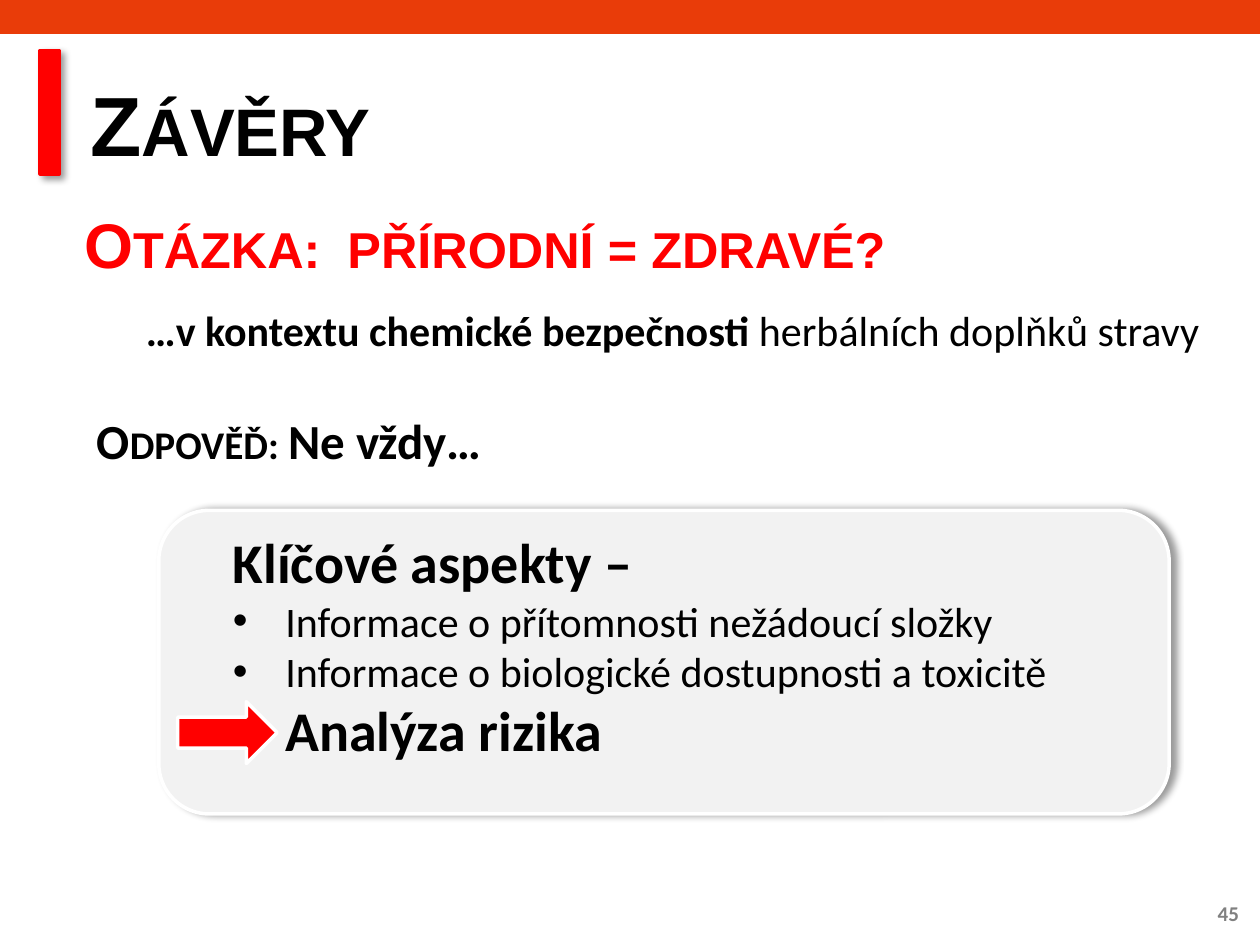
"""Build the conclusions slide with a question, its answer and the key aspects."""
from lxml import etree
from pptx import Presentation
from pptx.dml.color import RGBColor
from pptx.enum import shapes, text
from pptx.oxml.ns import qn
from pptx.util import Pt

THEME = {
    "heading": "Arial", "body": "Calibri",
    "black": "000000", "red": "FF0000", "orange": "E93C09",
    "panel": "F2F2F2", "white": "FFFFFF", "grey": "808080",
    "title": 48, "question": 36, "key": 32, "answer": 28, "text": 24, "number": 12,
}
INDENT = 30

BAR = (0, 0, 720, 19.4)
PANEL = (90.7, 291.6, 577.4, 173.5)
ACCENT = (23, 28.8, 10.8, 70.6)
ARROW = (101.5, 401, 56.9, 35.3)

# Each paragraph is a dict with runs of (wording, size, bold, small capitals).
TEXTS = [
    {"box": (666, 507.6, 49, 28.8), "color": "grey", "align": text.PP_ALIGN.RIGHT,
     "anchor": text.MSO_ANCHOR.MIDDLE,
     "paragraphs": [{"runs": [("45", "number", True, False)]}]},
    {"box": (44.6, 32.4, 652.3, 67.7), "font": "heading", "top": 9,
     "paragraphs": [{"runs": [("Závěry", "title", True, True)]}]},
    {"box": (76.3, 170.6, 623.5, 36),
     "paragraphs": [{"runs": [("…v kontextu chemické bezpečnosti ", "text", True, False),
                              ("herbálních doplňků stravy", "text", False, False)]}]},
    {"box": (41, 113.8, 538.6, 51.1), "font": "heading", "color": "red",
     "paragraphs": [{"tab": 150.5,
                     "runs": [("Otázka:\tpřírodní = zdravé?", "question", True, True)]}]},
    {"box": (48.2, 231.1, 268.6, 41),
     "paragraphs": [{"runs": [("Odpověď: ", "answer", True, True),
                              ("Ne vždy…", "answer", True, False)]}]},
    {"box": (126, 298.1, 549.4, 143.3),
     "paragraphs": [
         {"runs": [("Klíčové aspekty –", "key", True, False)]},
         {"bullet": "•",
          "runs": [("Informace o přítomnosti nežádoucí složky", "text", False, False)]},
         {"bullet": "•",
          "runs": [("Informace o biologické dostupnosti a toxicitě", "text", False, False)]},
         {"indent": True, "runs": [("Analýza rizika", "key", True, False)]},
     ]},
]


def color(name):
    return RGBColor.from_string(THEME[name])


def add_shape(slide, kind, box, fill, line=None, shadow_angle=None):
    shape = slide.shapes.add_shape(kind, *map(Pt, box))
    shape.fill.solid()
    shape.fill.fore_color.rgb = color(fill)
    if line:
        shape.line.color.rgb = color(line)
        shape.line.width = Pt(2)
    else:
        shape.line.fill.background()
    shape.shadow.inherit = False
    if shadow_angle is not None:
        effects = shape._element.spPr.find(qn("a:effectLst"))
        shadow = etree.SubElement(
            effects, qn("a:outerShdw"), blurRad=str(Pt(4)), dist=str(Pt(3)),
            dir=str(shadow_angle * 60000), algn="ctr", rotWithShape="0")
        shade = etree.SubElement(shadow, qn("a:srgbClr"), val=THEME["black"])
        etree.SubElement(shade, qn("a:alpha"), val="40000")
    return shape


def fill_paragraph(paragraph, item, content):
    properties = paragraph._p.get_or_add_pPr()
    if "bullet" in item or "indent" in item:
        properties.set("marL", str(Pt(INDENT)))
    if "bullet" in item:
        properties.set("indent", str(-Pt(INDENT)))
        etree.SubElement(properties, qn("a:buFont"), typeface="Arial")
        etree.SubElement(properties, qn("a:buChar"), char=item["bullet"])
    if "tab" in item:
        tabs = etree.SubElement(properties, qn("a:tabLst"))
        etree.SubElement(tabs, qn("a:tab"), pos=str(Pt(item["tab"])), algn="l")
    paragraph.alignment = content.get("align", text.PP_ALIGN.LEFT)
    paragraph.font.name = THEME[content.get("font", "body")]
    paragraph.font.color.rgb = color(content.get("color", "black"))
    for wording, size, bold, small in item["runs"]:
        run = paragraph.add_run()
        run.text = wording
        run.font.size = Pt(THEME[size])
        run.font.bold = bold
        if small:
            run._r.get_or_add_rPr().set("cap", "small")


def add_text(slide, content):
    frame = slide.shapes.add_textbox(*map(Pt, content["box"])).text_frame
    frame.word_wrap = True
    frame.vertical_anchor = content.get("anchor", text.MSO_ANCHOR.TOP)
    frame.margin_top = Pt(content.get("top", 3.6))
    for index, item in enumerate(content["paragraphs"]):
        paragraph = frame.add_paragraph() if index else frame.paragraphs[0]
        fill_paragraph(paragraph, item, content)


def main():
    presentation = Presentation()
    presentation.slide_width, presentation.slide_height = Pt(720), Pt(540)
    slide = presentation.slides.add_slide(presentation.slide_layouts[6])
    kinds = shapes.MSO_SHAPE
    add_shape(slide, kinds.RECTANGLE, BAR, "orange")
    add_shape(slide, kinds.ROUNDED_RECTANGLE, PANEL, "panel", "white", 0)
    add_shape(slide, kinds.RECTANGLE, ACCENT, "red", "red", 45)
    for content in TEXTS:
        add_text(slide, content)
    add_shape(slide, kinds.RIGHT_ARROW, ARROW, "red", "white")
    presentation.save("out.pptx")


if __name__ == "__main__":
    main()
